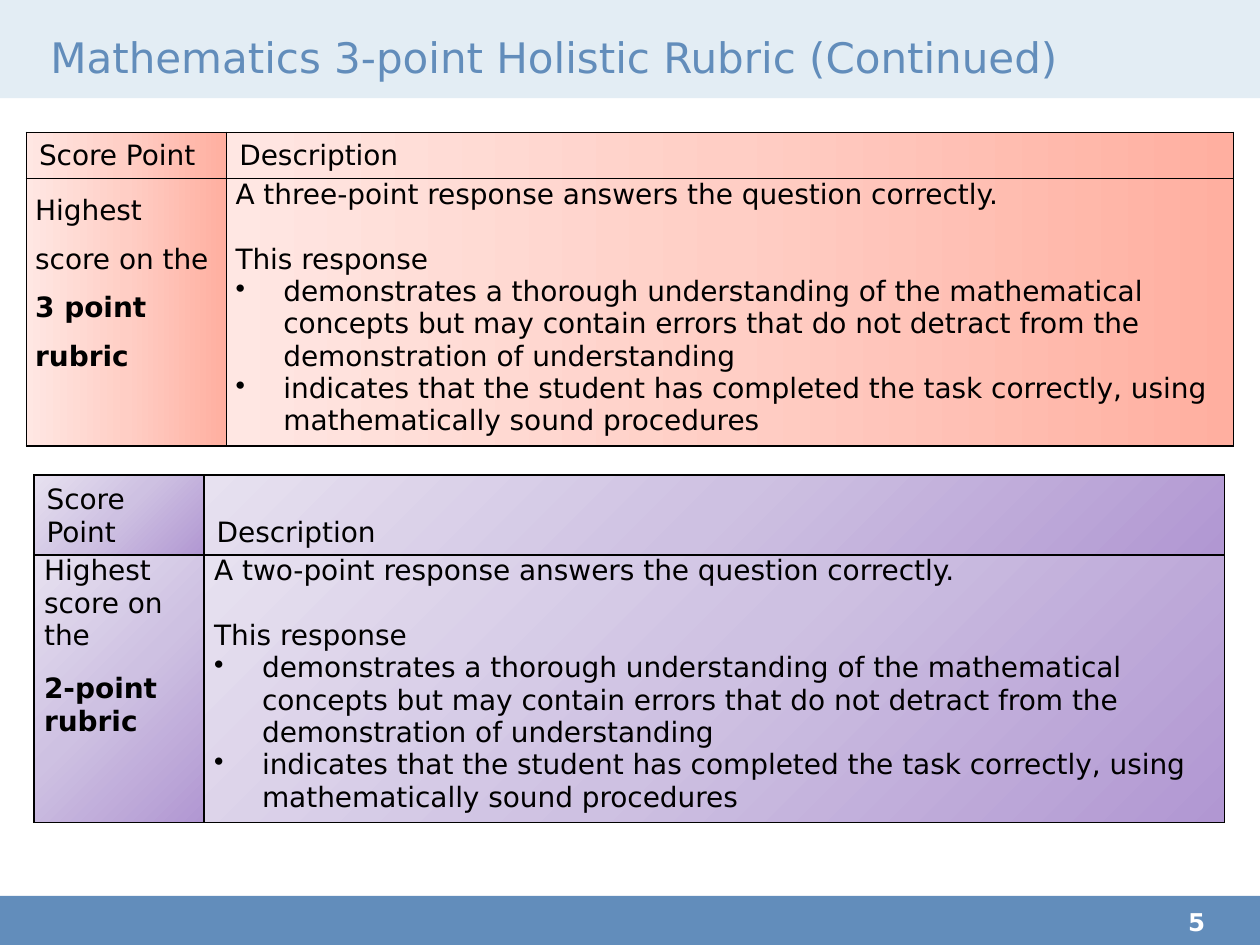
from lxml.etree import SubElement
from pptx import Presentation
from pptx.dml.color import RGBColor
from pptx.enum.shapes import MSO_SHAPE
from pptx.enum.text import MSO_ANCHOR
from pptx.oxml.ns import qn
from pptx.util import Inches, Pt

FONT = "DejaVu Sans"
BLUE, PALE_BLUE, BLACK, WHITE = "628DBB", "E3EDF4", "000000", "FFFFFF"
CORAL = ("FFAFA0", "FFCEC5", "FFE7E3")
PURPLE = ("B197D2", "CEC1E2", "E7E1F0")
CRITERIA = (
    "demonstrates a thorough understanding of the mathematical concepts but may "
    "contain errors that do not detract from the demonstration of understanding",
    "indicates that the student has completed the task correctly, using "
    "mathematically sound procedures",
)


def rgb(value):
    """Turn a hex string into a colour."""
    return RGBColor.from_string(value)


def style(paragraph, size, color, bold=None):
    """Set the font of a paragraph."""
    font = paragraph.font
    font.name, font.size, font.bold = FONT, Pt(size), bold
    font.color.rgb = rgb(color)


def add_band(slide, box, color):
    """Draw a plain coloured band."""
    band = slide.shapes.add_shape(MSO_SHAPE.RECTANGLE, *map(Inches, box))
    band.shadow.inherit = False
    band.fill.solid()
    band.fill.fore_color.rgb = rgb(color)
    band.line.fill.background()


def add_label(slide, box, text, size, color, bold=None, anchor=MSO_ANCHOR.TOP, insets=(0, 0)):
    """Place one line of text with the given right and bottom insets."""
    frame = slide.shapes.add_textbox(*map(Inches, box)).text_frame
    frame.word_wrap = True
    frame.vertical_anchor = anchor
    frame.margin_left = frame.margin_top = 0
    frame.margin_right, frame.margin_bottom = map(Inches, insets)
    frame.text = text
    style(frame.paragraphs[0], size, color, bold)


def add_header(slide, box, title):
    """Draw the title band and its title."""
    left, top, width, height = box
    add_band(slide, box, PALE_BLUE)
    add_label(slide, (left + 0.4, top + 0.23, width - 1, 0.49), title, 24, BLUE,
              anchor=MSO_ANCHOR.MIDDLE, insets=(0.1, 0.05))


def add_footer(slide, box, number):
    """Draw the bottom band and the slide number."""
    left, top, width, height = box
    add_band(slide, box, BLUE)
    add_label(slide, (left + width - 0.57, top + 0.09, 0.57, 0.3), number, 14, WHITE, bold=True)


def add_solid(parent, color):
    """Append a solid fill element."""
    SubElement(SubElement(parent, qn("a:solidFill")), qn("a:srgbClr"), val=color)


def paint_cell(cell, colors, angle):
    """Give a cell thin black borders and a linear gradient."""
    properties = cell._tc.get_or_add_tcPr()
    for side in "LRTB":
        add_solid(SubElement(properties, qn(f"a:ln{side}"), w=str(Pt(1))), BLACK)
    gradient = SubElement(properties, qn("a:gradFill"), rotWithShape="1")
    stops = SubElement(gradient, qn("a:gsLst"))
    for position, color in zip((0, 50, 100), colors):
        stop = SubElement(stops, qn("a:gs"), pos=str(position * 1000))
        SubElement(stop, qn("a:srgbClr"), val=color)
    SubElement(gradient, qn("a:lin"), ang=str(angle * 60000), scaled="0")


def add_bullet(paragraph):
    """Give a paragraph a bullet with a hanging indent."""
    properties = paragraph._p.get_or_add_pPr()
    properties.set("marL", str(Inches(0.38)))
    properties.set("indent", str(-Inches(0.38)))
    SubElement(properties, qn("a:buChar"), char="•")


def fill_score(frame, lines, line_spacing, gap):
    """Write the score cell, whose last run is the bold rubric name."""
    for index, runs in enumerate(lines):
        paragraph = frame.paragraphs[0] if index == 0 else frame.add_paragraph()
        style(paragraph, 16, BLACK)
        paragraph.line_spacing = line_spacing
        paragraph.space_before = paragraph.space_after = Pt(gap)
        for text in runs:
            run = paragraph.add_run()
            run.text = text
    run.font.bold = True


def fill_description(frame, summary):
    """Write the summary sentence and the bulleted criteria."""
    frame.text = "\n".join((summary, "This response", *CRITERIA))
    for paragraph in frame.paragraphs:
        style(paragraph, 16, BLACK)
    frame.paragraphs[1].space_before = Pt(18.6)
    for paragraph in frame.paragraphs[2:]:
        add_bullet(paragraph)


def add_rubric(slide, box, score_width, header_height, colors, angle, inset,
               score_lines, summary, line_spacing=1.0, gap=0):
    """Build a rubric table inside the box."""
    left, top, width, height = box
    table = slide.shapes.add_table(2, 2, *map(Inches, box)).table
    table.first_row = table.horz_banding = False
    for column, size in zip(table.columns, (score_width, width - score_width)):
        column.width = Inches(size)
    for row, size in zip(table.rows, (header_height, height - header_height)):
        row.height = Inches(size)
    for cell in table.iter_cells():
        paint_cell(cell, colors, angle)
    for column, heading in enumerate(("Score Point", "Description")):
        head, body = table.cell(0, column), table.cell(1, column)
        head.text = heading
        head.vertical_anchor = MSO_ANCHOR.BOTTOM
        style(head.text_frame.paragraphs[0], 16, BLACK)
        body.margin_left = body.margin_right = Inches(inset)
        body.margin_top = body.margin_bottom = 0
    fill_score(table.cell(1, 0).text_frame, score_lines, line_spacing, gap)
    fill_description(table.cell(1, 1).text_frame, summary)


def main():
    """Build and save the slide."""
    deck = Presentation()
    deck.slide_width, deck.slide_height = Inches(10), Inches(7.5)
    slide = deck.slides.add_slide(deck.slide_layouts[6])
    add_header(slide, (0, 0, 10, 0.78), "Mathematics 3-point Holistic Rubric (Continued)")
    add_rubric(slide, (0.21, 1.05, 9.58, 2.41), 1.59, 0.36, CORAL, 180, 0.07,
               [("Highest score on the ", "3 point rubric")],
               "A three-point response answers the question correctly.", line_spacing=1.5)
    add_rubric(slide, (0.27, 3.77, 9.45, 2.67), 1.35, 0.61, PURPLE, 225, 0.08,
               [("Highest score on the",), ("2-point rubric",)],
               "A two-point response answers the question correctly.", gap=6)
    add_footer(slide, (0, 7.11, 10, 0.39), "5")
    deck.save("out.pptx")


if __name__ == "__main__":
    main()
